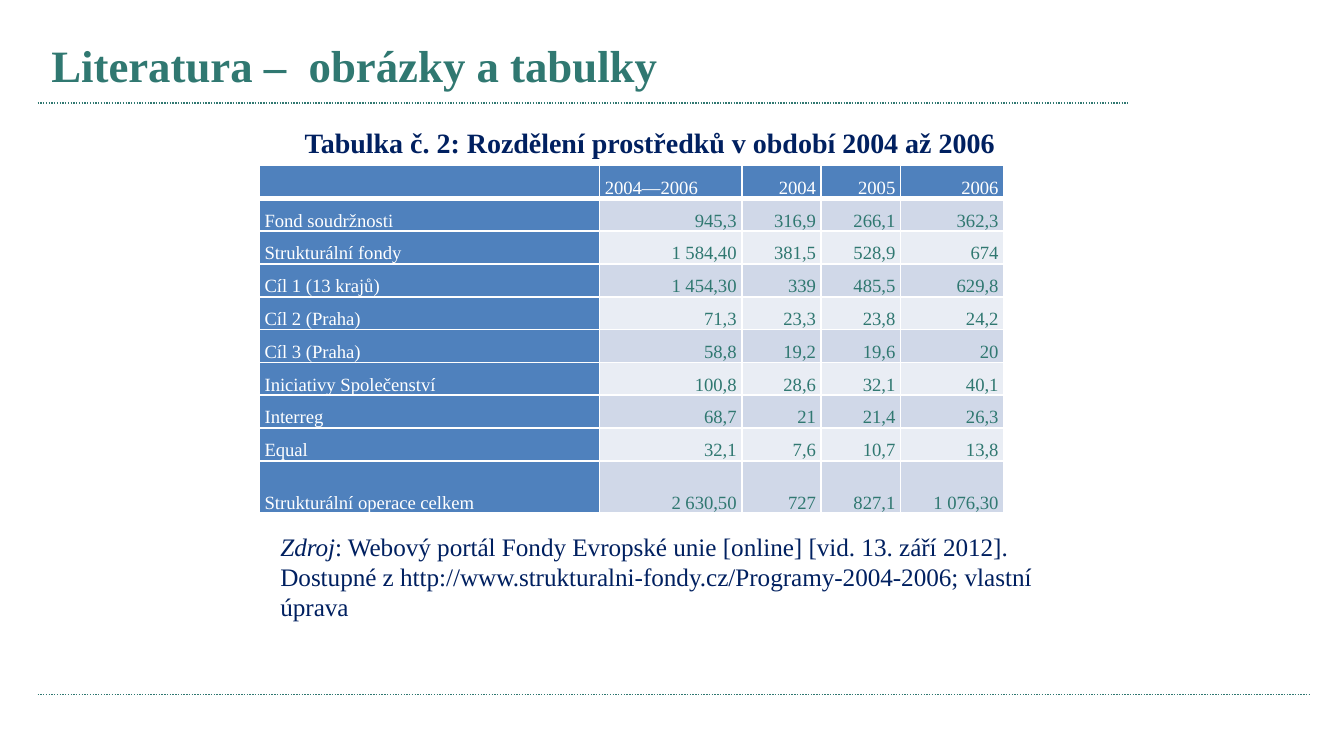
import pptx
import pptx.util
import pptx.dml.color
import pptx.enum.dml
import pptx.enum.shapes
import pptx.enum.text
import pptx.oxml
import pptx.oxml.ns
import lxml.etree

Cm = pptx.util.Cm
Pt = pptx.util.Pt
ANCHOR = pptx.enum.text.MSO_ANCHOR
ALIGN = pptx.enum.text.PP_ALIGN
qn = pptx.oxml.ns.qn

COLORS = {
    "teal": "307871",
    "navy": "002060",
    "blue": "4F81BD",
    "white": "FFFFFF",
    "odd": "D0D8E8",
    "even": "E9EDF4",
}


def rgb(name):
    return pptx.dml.color.RGBColor.from_string(COLORS[name])


def add_span(para, text, color, font):
    span = para.add_run()
    span.text = text
    span.font.color.rgb = rgb(color)
    for name, value in {"name": "Times New Roman", **font}.items():
        setattr(span.font, name, value)


deck = pptx.Presentation()
deck.slide_width = Cm(25.4)
deck.slide_height = Cm(14.29)
slide = deck.slides.add_slide(deck.slide_layouts[6])

for right, y in [(21.31, 1.95), (24.77, 13.13)]:
    rule = slide.shapes.add_connector(
        pptx.enum.shapes.MSO_CONNECTOR.STRAIGHT, Cm(0.71), Cm(y), Cm(right), Cm(y)
    )
    rule.line.color.rgb = rgb("teal")
    rule.line.width = Pt(0.75)
    rule.line.dash_style = pptx.enum.dml.MSO_LINE.ROUND_DOT
    lxml.etree.SubElement(rule._element.spPr, qn("a:effectLst"))

title_font = {"size": Pt(24), "bold": True}
caption_font = {"size": Pt(15), "bold": True}
source_font = {"size": Pt(13.5)}
texts = [
    ((0.51, 0.53, 21.21, 1.4), ANCHOR.MIDDLE, "teal",
     [(" Literatura –  obrázky a tabulky", title_font)]),
    ((5.05, 9.91, 15.27, 2.49), ANCHOR.TOP, "navy",
     [("Zdroj", {**source_font, "italic": True}),
      (": Webový portál Fondy Evropské unie [online] [vid. 13. září 2012]. "
       "Dostupné z http://www.strukturalni-fondy.cz/Programy-2004-2006; "
       "vlastní úprava", source_font)]),
    ((5.51, 2.24, 13.79, 0.89), ANCHOR.TOP, "navy",
     [("Tabulka č. 2: Rozdělení prostředků v období 2004 až 2006", caption_font)]),
]
for place, anchor, color, spans in texts:
    box = slide.shapes.add_textbox(*[Cm(length) for length in place])
    box.text_frame.word_wrap = True
    box.text_frame.vertical_anchor = anchor
    for text, font in spans:
        add_span(box.text_frame.paragraphs[0], text, color, font)

rows = [
    ["", "2004—2006", "2004", "2005", "2006"],
    ["Fond soudržnosti", "945,3", "316,9", "266,1", "362,3"],
    ["Strukturální fondy", "1 584,40", "381,5", "528,9", "674"],
    ["Cíl 1 (13 krajů)", "1 454,30", "339", "485,5", "629,8"],
    ["Cíl 2 (Praha)", "71,3", "23,3", "23,8", "24,2"],
    ["Cíl 3 (Praha)", "58,8", "19,2", "19,6", "20"],
    ["Iniciativy Společenství", "100,8", "28,6", "32,1", "40,1"],
    ["Interreg", "68,7", "21", "21,4", "26,3"],
    ["Equal", "32,1", "7,6", "10,7", "13,8"],
    ["Strukturální operace celkem", "2 630,50", "727", "827,1", "1 076,30"],
]
widths = [6.43, 2.69, 1.5, 1.5, 1.95]
heights = [0.62] * 9 + [0.99]
cell_format = {
    "margin_left": Cm(0.1),
    "margin_right": Cm(0.1),
    "margin_top": 0,
    "margin_bottom": 0,
    "vertical_anchor": ANCHOR.BOTTOM,
}

table = slide.shapes.add_table(
    len(rows), len(widths), Cm(4.9), Cm(3.13), Cm(sum(widths)), Cm(sum(heights))
).table
for column, width in zip(table.columns, widths):
    column.width = Cm(width)
for line, height in zip(table.rows, heights):
    line.height = Cm(height)

for r, values in enumerate(rows):
    for c, value in enumerate(values):
        cell = table.cell(r, c)
        for name, setting in cell_format.items():
            setattr(cell, name, setting)
        heading = r == 0 or c == 0
        para = cell.text_frame.paragraphs[0]
        para.alignment = ALIGN.LEFT if c == 0 or (r, c) == (0, 1) else ALIGN.RIGHT
        if value:
            add_span(para, value, "white" if heading else "teal", {"size": Pt(10)})
        else:
            lxml.etree.SubElement(para._p, qn("a:endParaRPr"), sz="1000")
        properties = cell._tc.get_or_add_tcPr()
        for side in ["lnL", "lnR", "lnT", "lnB"]:
            width = Pt(3) if r == 0 and side == "lnB" else Pt(1)
            border = lxml.etree.SubElement(properties, qn("a:" + side), w=str(width))
            paint = lxml.etree.SubElement(border, qn("a:solidFill"))
            lxml.etree.SubElement(paint, qn("a:srgbClr"), val=COLORS["white"])
        cell.fill.solid()
        cell.fill.fore_color.rgb = rgb("blue" if heading else "odd" if r % 2 else "even")

deck.save("out.pptx")
